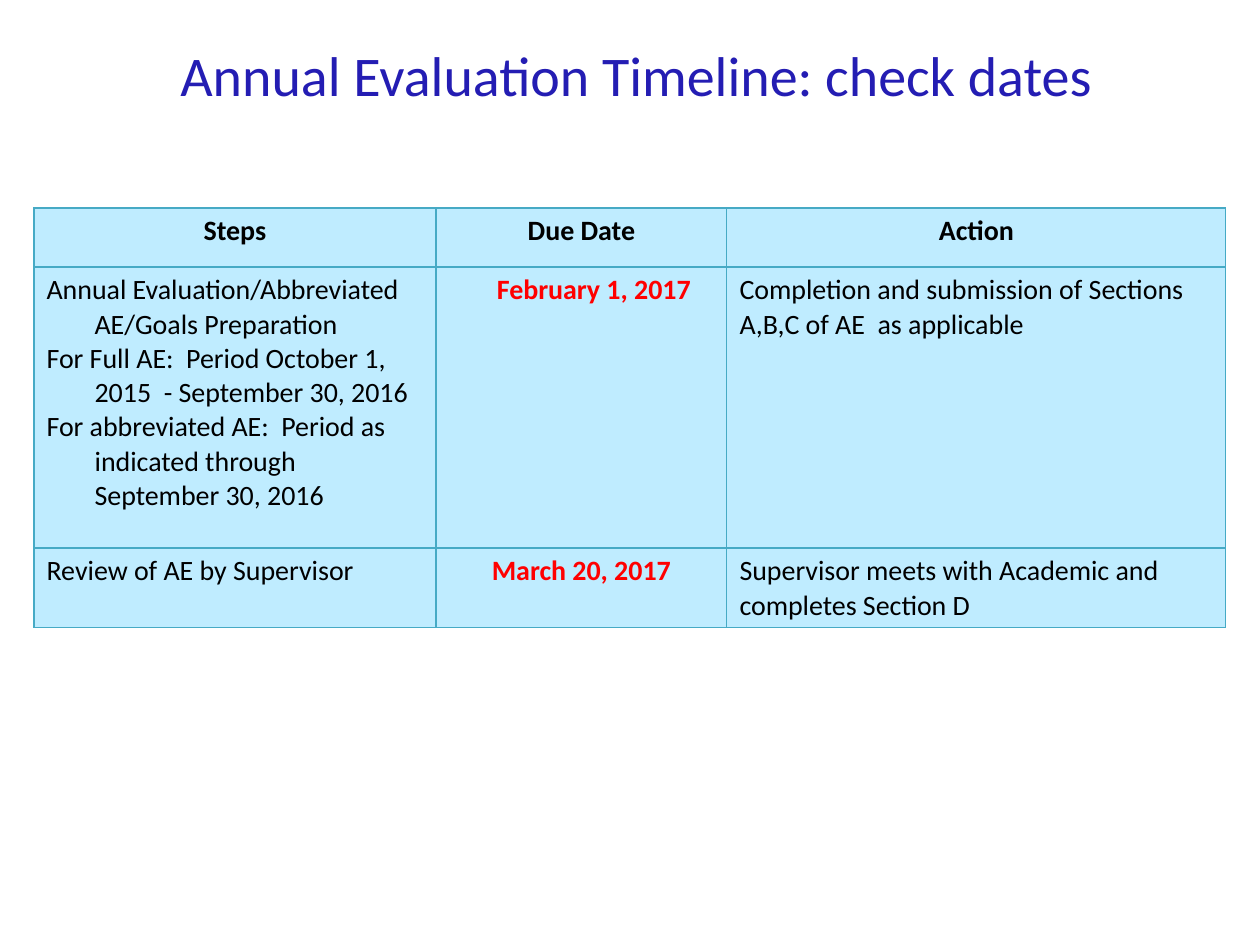
from dataclasses import dataclass

import pptx
import pptx.dml.color
import pptx.enum.text
import pptx.oxml
import pptx.oxml.ns
import pptx.util

SCALE = 914400 / 126
FONT = "Calibri"
COLORS = {
    "title": "241DB3",
    "text": "000000",
    "date": "FF0000",
    "cell": "BFECFF",
    "border": "46AAC5",
}
ALIGN = pptx.enum.text.PP_ALIGN
HANG = 48


@dataclass
class Entry:
    paragraphs: list[str]
    color: str = "text"
    bold: bool = False
    align: ALIGN = ALIGN.LEFT
    hang: int = HANG
    first: int = 0


def header(text: str) -> Entry:
    return Entry([text], bold=True, align=ALIGN.CENTER)


def date(text: str, first: int = 0) -> Entry:
    return Entry([text], "date", True, ALIGN.CENTER, first=first)


def action(text: str) -> Entry:
    return Entry([text], hang=0)


COLUMNS = [402, 291, 499]
HEIGHTS = [59, 281, 80]
ROWS = [
    [header("Steps"), header("Due Date"), header("Action")],
    [
        Entry([
            "Annual Evaluation/Abbreviated AE/Goals Preparation",
            "For Full AE:  Period October 1, 2015  - September 30, 2016",
            "For abbreviated AE:  Period as indicated through September 30, 2016",
        ]),
        date("February 1, 2017", first=25),
        action("Completion and submission of Sections A,B,C of AE  as applicable"),
    ],
    [
        Entry(["Review of AE by Supervisor"]),
        date("March 20, 2017"),
        action("Supervisor meets with Academic and completes Section D"),
    ],
]


def px(n: int) -> int:
    return round(n * SCALE)


def rgb(name: str) -> pptx.dml.color.RGBColor:
    return pptx.dml.color.RGBColor.from_string(COLORS[name])


def add_run(p, text: str, size: int, color: str, bold: bool = False) -> None:
    r = p.add_run()
    r.text = text
    r.font.name = FONT
    r.font.size = pptx.util.Pt(size)
    r.font.bold = bold
    r.font.color.rgb = rgb(color)


def indent(p, left: int, first: int) -> None:
    pPr = p._p.get_or_add_pPr()
    pPr.set("marL", str(px(left)))
    pPr.set("indent", str(px(first - left)))


def add_borders(cell) -> None:
    tcPr = cell._tc.get_or_add_tcPr()
    for side in ("lnL", "lnR", "lnT", "lnB"):
        tcPr.append(pptx.oxml.parse_xml(
            f'<a:{side} {pptx.oxml.ns.nsdecls("a")} w="{pptx.util.Pt(0.75)}">'
            f'<a:solidFill><a:srgbClr val="{COLORS["border"]}"/></a:solidFill>'
            f'</a:{side}>'
        ))


def fill_cell(cell, entry: Entry) -> None:
    add_borders(cell)
    cell.fill.solid()
    cell.fill.fore_color.rgb = rgb("cell")
    tf = cell.text_frame
    for i, text in enumerate(entry.paragraphs):
        p = tf.add_paragraph() if i else tf.paragraphs[0]
        p.alignment = entry.align
        indent(p, entry.hang, entry.first)
        add_run(p, text, 16, entry.color, entry.bold)


def add_title(s, text: str) -> None:
    sp = s.shapes.add_textbox(px(113), px(34), px(1021), px(81))
    tf = sp.text_frame
    tf.word_wrap = True
    p = tf.paragraphs[0]
    indent(p, 55, 55)
    add_run(p, text, 32, "title")


def add_timeline(s) -> None:
    table = s.shapes.add_table(
        len(ROWS), len(COLUMNS), px(34), px(208), px(sum(COLUMNS)), px(sum(HEIGHTS))
    ).table
    table.first_row = False
    table.horz_banding = False
    for column, width in zip(table.columns, COLUMNS):
        column.width = px(width)
    for row, height, entries in zip(table.rows, HEIGHTS, ROWS):
        row.height = px(height)
        for cell, entry in zip(row.cells, entries):
            fill_cell(cell, entry)


def main() -> None:
    prs = pptx.Presentation()
    prs.slide_width = px(1260)
    prs.slide_height = px(945)
    s = prs.slides.add_slide(prs.slide_layouts[6])
    add_title(s, "Annual Evaluation Timeline: check dates")
    add_timeline(s)
    prs.save("out.pptx")


if __name__ == "__main__":
    main()
